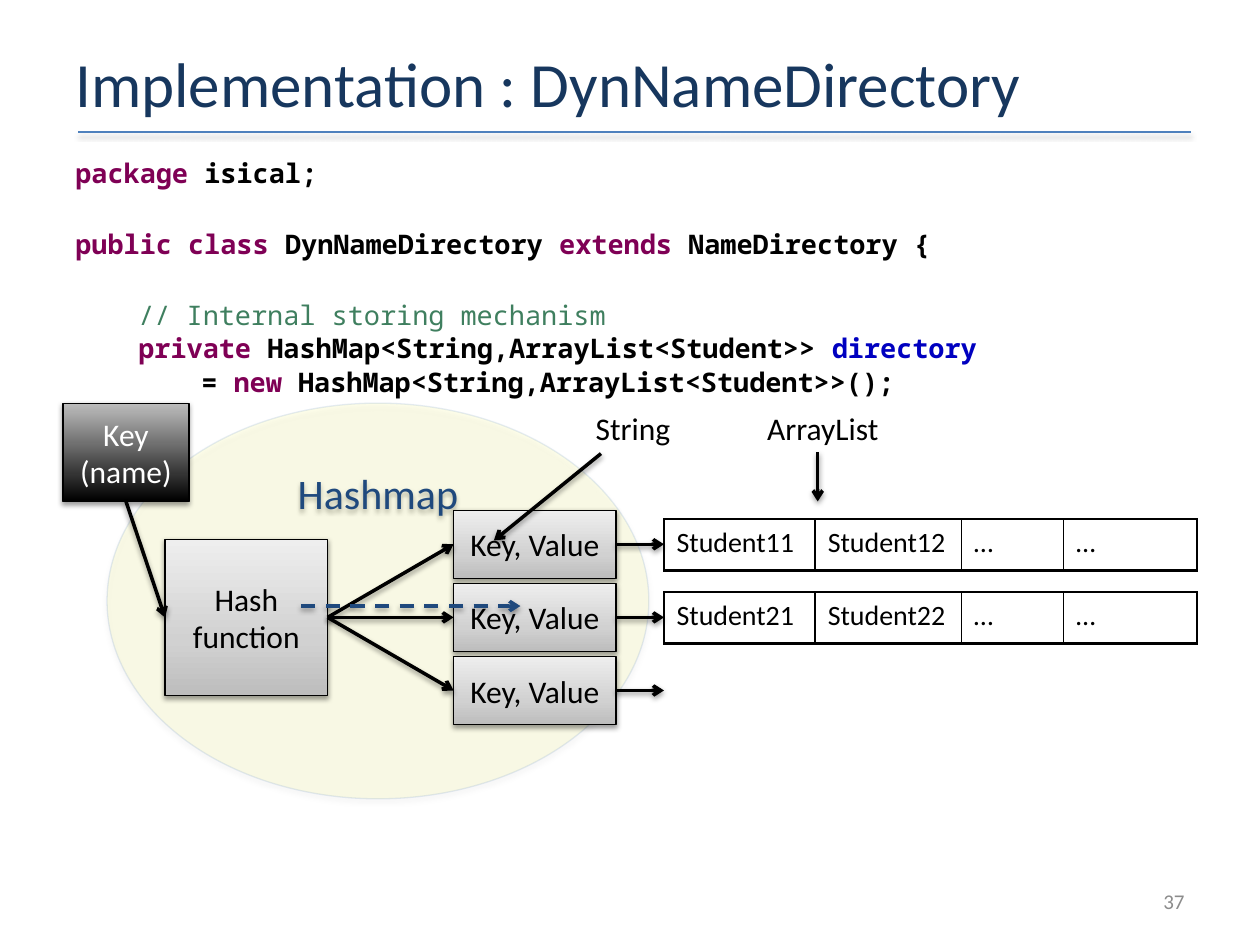
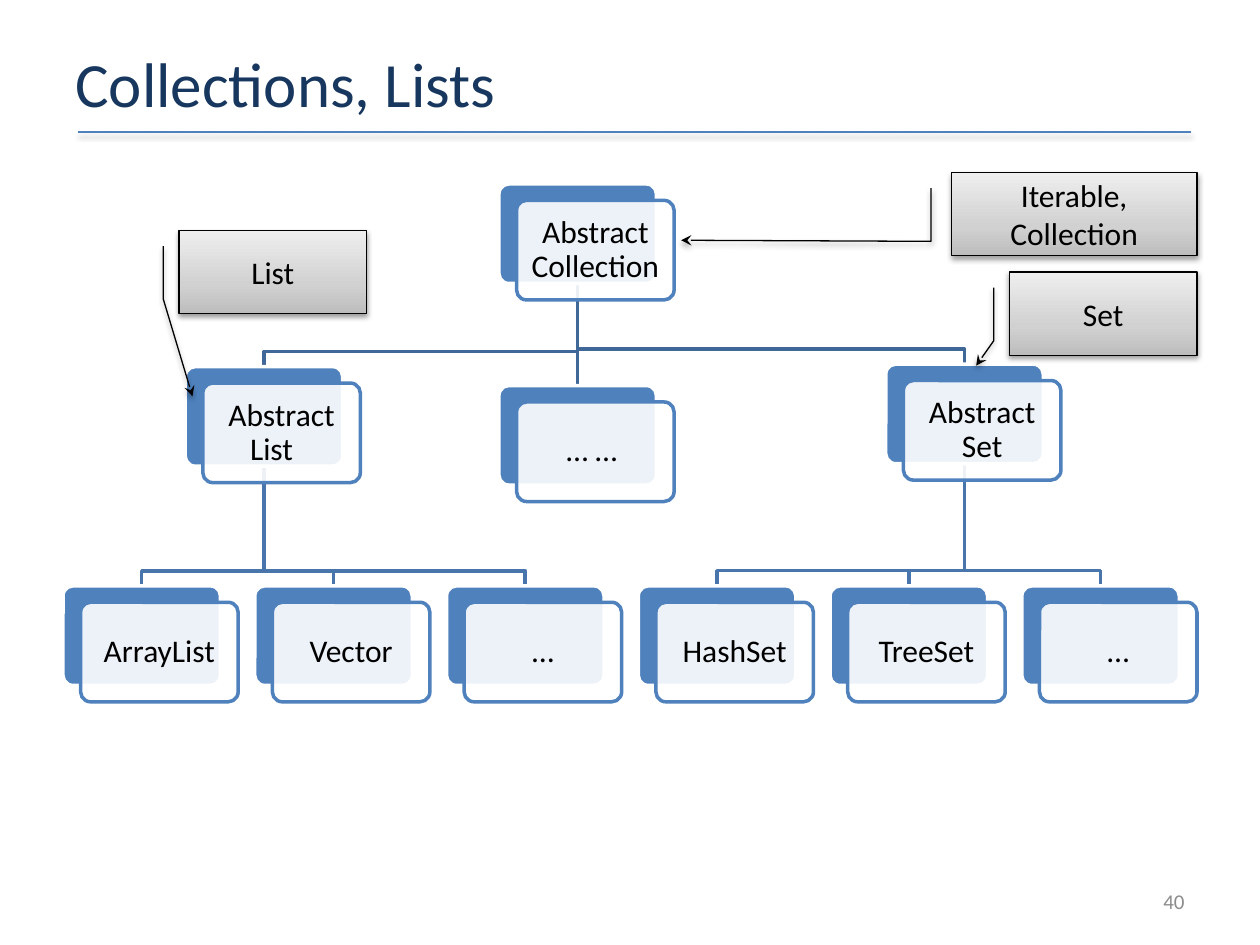
from dataclasses import dataclass
from typing import Any, NamedTuple, Optional

from lxml.etree import SubElement as Sub
from pptx import Presentation
from pptx.dml.color import RGBColor as Rgb
from pptx.enum.dml import MSO_LINE as Dash
from pptx.enum.shapes import MSO_CONNECTOR as Conn, MSO_SHAPE as Geom
from pptx.enum.text import MSO_ANCHOR as Anchor, PP_ALIGN as Align
from pptx.oxml.ns import qn
from pptx.util import Inches, Pt


@dataclass(frozen=True)
class Theme:
    font: str = "Calibri"
    mono: str = "Noto Sans Mono"
    black: str = "000000"
    white: str = "FFFFFF"
    title: str = "17375E"
    navy: str = "1F497D"
    blue: str = "4F81BD"
    upper: str = "3F6797"
    lower: str = "4875AC"
    number: str = "8C8C8C"
    keyword: str = "7F0055"
    remark: str = "3F7F5F"
    field: str = "0000C0"
    title_pt: float = 36
    label_pt: float = 24
    text_pt: float = 18
    cell_pt: float = 16
    code_pt: float = 15.4
    small_pt: float = 12


T = Theme()
GREY = ((0, "BDBDBD"), (35, "D1D1D1"), (100, "EEEEEE"))
DARK = ((0, T.black), (100, "BDBDBD"))


class Box(NamedTuple):
    x: float
    y: float
    w: float
    h: float

    def emu(self) -> list:
        return [Inches(v) for v in self]


class Line(NamedTuple):
    """Straight line; a joined end gives a shape and the index of its side."""
    start: tuple
    end: tuple
    color: str = T.black
    width: float = 2
    head: Optional[str] = "arrow"
    dash: Any = None
    shadow: bool = True


class Card(NamedTuple):
    text: str
    x: float
    y: float
    boss: Optional[str] = None


class Call(NamedTuple):
    text: str
    box: Box
    tip: tuple


class Code(NamedTuple):
    indent: float
    gap: bool
    runs: tuple


# Formatting helpers
def put(obj: Any, **vals: Any) -> None:
    for name, val in vals.items():
        setattr(obj, name, val)


def ink(font: Any, size: float, color: str, name: str = T.font, bold: bool = False) -> None:
    put(font, name=name, size=Pt(size), bold=bold)
    font.color.rgb = Rgb.from_string(color)


def write(frame: Any, text: str, size: float = T.text_pt, color: str = T.black,
          align: Any = Align.LEFT, anchor: Any = Anchor.TOP) -> None:
    put(frame, word_wrap=True, vertical_anchor=anchor)
    para = frame.paragraphs[0]
    para.alignment = align
    run = para.add_run()
    run.text = text
    ink(run.font, size, color)


def label(slide: Any, box: Box, text: str, **look: Any) -> None:
    write(slide.shapes.add_textbox(*box.emu()).text_frame, text, **look)


def fade(fill: Any, percent: int) -> None:
    Sub(fill.find(qn("a:solidFill"))[0], qn("a:alpha"), val=str(percent * 1000))


def stroke(line: Any, color: str, width: float) -> None:
    line.color.rgb = Rgb.from_string(color)
    line.width = Pt(width)


def shade(effects: Any, alpha: int = 38, drop: float = 1.6) -> None:
    cast = Sub(effects, qn("a:outerShdw"), blurRad=str(Pt(3.1)), dist=str(Pt(drop)),
               dir="5400000", rotWithShape="0")
    tone = Sub(cast, qn("a:srgbClr"), val=T.black)
    Sub(tone, qn("a:alpha"), val=str(alpha * 1000))


def tip(shape: Any, kind: str) -> None:
    Sub(shape.element.spPr.find(qn("a:ln")), qn("a:tailEnd"), type=kind)


def blend(shape: Any, stops: tuple) -> None:
    shape.fill.gradient()
    shape.fill.gradient_angle = 90
    ramp = shape.element.spPr.find(qn("a:gradFill")).find(qn("a:gsLst"))
    ramp.clear()
    for pos, color in stops:
        Sub(Sub(ramp, qn("a:gs"), pos=str(pos * 1000)), qn("a:srgbClr"), val=color)


# Drawing helpers
def shape_at(slide: Any, kind: Any, box: Box, fill: Any, line: str, width: float) -> Any:
    shape = slide.shapes.add_shape(kind, *box.emu())
    shape.shadow.inherit = False
    if isinstance(fill, str):
        shape.fill.solid()
        shape.fill.fore_color.rgb = Rgb.from_string(fill)
    else:
        blend(shape, fill)
    stroke(shape.line, line, width)
    return shape


def block(slide: Any, box: Box, text: str, kind: Any = Geom.RECTANGLE,
          stops: tuple = GREY, color: str = T.black) -> Any:
    shape = shape_at(slide, kind, box, stops, T.black, 0.75)
    shade(shape.element.spPr.find(qn("a:effectLst")))
    write(shape.text_frame, text, color=color, align=Align.CENTER, anchor=Anchor.MIDDLE)
    return shape


def draw(slide: Any, item: Line) -> Any:
    ends = [(0, 0) if hasattr(p[0], "shape_id") else p for p in (item.start, item.end)]
    line = slide.shapes.add_connector(
        Conn.STRAIGHT, *[Inches(v) for end in ends for v in end])
    for point, join in ((item.start, line.begin_connect), (item.end, line.end_connect)):
        if hasattr(point[0], "shape_id"):
            join(*point)
    stroke(line.line, item.color, item.width)
    if item.dash:
        line.line.dash_style = item.dash
    if item.head:
        tip(line, item.head)
    effects = Sub(line.element.spPr, qn("a:effectLst"))
    if item.shadow:
        shade(effects)
    return line


def start(deck: Any, title: str, number: int) -> Any:
    """New slide with title, rule and page number."""
    slide = deck.slides.add_slide(deck.slide_layouts[6])
    draw(slide, Line((0.62, 1.05), (9.45, 1.05), T.blue, 1, None))
    label(slide, Box(0.5, 0.3, 9, 0.71), title, size=T.title_pt, color=T.title,
          anchor=Anchor.MIDDLE)
    label(slide, Box(7.17, 6.95, 2.33, 0.4), str(number), size=T.small_pt,
          color=T.number, align=Align.RIGHT, anchor=Anchor.MIDDLE)
    return slide


# Slide 1: code, hash map and student lists
K, B = T.keyword, T.black
CODE = (
    Code(0, False, (("package ", K), ("isical;", B))),
    Code(0, True, (("public class ", K), ("DynNameDirectory ", B), ("extends ", K),
                   ("NameDirectory {", B))),
    Code(0.5, True, (("// Internal storing mechanism", T.remark),)),
    Code(0.5, False, (("private ", K), ("HashMap<String,ArrayList<Student>> ", B),
                      ("directory", T.field))),
    Code(1, False, (("= ", B), ("new ", K), ("HashMap<String,ArrayList<Student>>();", B))),
)


def code(slide: Any) -> None:
    frame = slide.shapes.add_textbox(*Box(0.5, 1.19, 9, 1.99).emu()).text_frame
    frame.word_wrap = True
    for i, row in enumerate(CODE):
        para = frame.add_paragraph() if i else frame.paragraphs[0]
        para.space_before = Pt(22.2 if row.gap else 0.6)
        para._p.get_or_add_pPr().set("marL", str(Inches(row.indent)))
        for text, color in row.runs:
            run = para.add_run()
            run.text = text
            ink(run.font, T.code_pt, color, T.mono, color != T.remark)


def grid(slide: Any, top: float, names: tuple) -> None:
    wide = (1.2, 1.16, 0.81, 1.06)
    box = Box(5.27, top, sum(wide), 0.41)
    table = slide.shapes.add_table(1, len(wide), *box.emu()).table
    put(table, first_row=False, horz_banding=False)
    for col, width, cell, name in zip(table.columns, wide, table.rows[0].cells, names):
        col.width = Inches(width)
        write(cell.text_frame, name, T.cell_pt)
        props = cell._tc.get_or_add_tcPr()
        for side, weight in zip("LRTB", (1, 1, 1, 2)):
            edge = Sub(props, qn(f"a:ln{side}"), w=str(Pt(weight)))
            Sub(Sub(edge, qn("a:solidFill")), qn("a:srgbClr"), val=T.black)
        cell.fill.background()


def map_slide(deck: Any) -> None:
    slide = start(deck, "Implementation : DynNameDirectory", 37)
    oval = shape_at(slide, Geom.OVAL, Box(0.85, 3.2, 4.3, 3.14), "FFFF00", "4B7EBC", 0.75)
    props = oval.element.spPr
    fade(props, 8)
    fade(props.find(qn("a:ln")), 14)
    shade(props.find(qn("a:effectLst")), 35, 1.8)
    write(oval.text_frame, "Hashmap", T.label_pt, T.navy, Align.CENTER)
    code(slide)

    # Hash function, its entries and their lists
    step = 0.58
    hasher = block(slide, Box(1.31, 4.28, 1.29, 1.24), "Hash function")
    for i in range(3):
        entry = block(slide, Box(3.6, 4.05 + i * step, 1.29, 0.54), "Key, Value")
        draw(slide, Line((hasher, 3), (entry, 1)))
        draw(slide, Line((entry, 3), (5.27, 4.32 + i * step)))
    for i in range(2):
        grid(slide, 4.12 + i * step, (f"Student{i + 1}1", f"Student{i + 1}2", "…", "…"))

    # Key and type labels
    key = block(slide, Box(0.5, 3.2, 1, 0.78), "Key (name)", stops=DARK, color=T.white)
    label(slide, Box(4.63, 3.2, 1.04, 0.4), "String")
    label(slide, Box(5.99, 3.2, 1.14, 0.4), "ArrayList")
    for line in (
        Line((key, 2), (hasher, 1)),
        Line((2.39, 4.81), (4.13, 4.81), T.navy, dash=Dash.DASH),
        Line((4.77, 3.6), (3.92, 4.29)),
        Line((6.49, 3.59), (6.49, 3.98)),
    ):
        draw(slide, line)


# Slide 2: class tree
WIDE, HIGH = 1.25, 0.79
STEP = 7.61 / 5
LEAVES = ("ArrayList", "Vector", "…", "HashSet", "TreeSet", "…")
ROOT, LIST, SET = "Abstract Collection", "Abstract List\t", "Abstract Set"
CARDS = (
    Card(ROOT, 3.96, 1.46),
    Card(LIST, 1.47, 2.91, ROOT),
    Card("… … ", 3.96, 3.06, ROOT),
    Card(SET, 7.03, 2.89, ROOT),
    *(Card(text, 0.5 + i * STEP, 4.65, LIST if i < 3 else SET)
      for i, text in enumerate(LEAVES)),
)
CALLS = (
    Call("Iterable, Collection", Box(7.55, 1.37, 1.95, 0.66), (0.814, -1.1)),
    Call("List", Box(1.42, 1.83, 1.49, 0.66), (1.994, 0.072)),
    Call("Set", Box(8.01, 2.16, 1.49, 0.66), (1.125, -0.176)),
)


def card(slide: Any, item: Card) -> Any:
    kind = Geom.ROUNDED_RECTANGLE
    back = shape_at(slide, kind, Box(item.x, item.y, WIDE, HIGH), T.blue, T.white, 2)
    front = shape_at(slide, kind, Box(item.x + 0.14, item.y + 0.13, WIDE, HIGH),
                     T.white, T.blue, 2)
    fade(front.element.spPr, 90)
    for shape in (back, front):
        shape.adjustments[0] = 0.1
    frame = front.text_frame
    inset = Inches(0.09)
    put(frame, margin_left=inset, margin_right=inset, margin_top=inset, margin_bottom=inset)
    write(frame, item.text, align=Align.CENTER, anchor=Anchor.MIDDLE)
    frame.paragraphs[0].line_spacing = 0.9
    return back


def link(slide: Any, boss: Any, item: Any, color: str) -> None:
    """Elbow from boss to item, placed behind the cards."""
    x1, x2 = (s.left + s.width // 2 for s in (boss, item))
    if x1 == x2:
        line = draw(slide, Line((boss, 2), (item, 0), color, 2, None, shadow=False))
    else:
        bend = item.top - Inches(0.12)
        path = slide.shapes.build_freeform(x1, boss.top + boss.height)
        path.add_line_segments([(x1, bend), (x2, bend), (x2, item.top)], close=False)
        line = path.convert_to_shape()
        line.fill.background()
        line.shadow.inherit = False
        stroke(line.line, color, 2)
    line.element.getparent().insert(2, line.element)


def tree_slide(deck: Any) -> None:
    slide = start(deck, "Collections, Lists", 40)
    drawn = {}
    for item in CARDS:
        back = card(slide, item)
        drawn[item.text] = back
        if item.boss:
            link(slide, drawn[item.boss], back, T.upper if item.boss == ROOT else T.lower)
    for call in CALLS:
        shape = block(slide, call.box, call.text, Geom.LINE_CALLOUT_2)
        for i, val in enumerate((0.188, -0.083, 0.827, -0.083, *call.tip)):
            shape.adjustments[i] = val
        tip(shape, "stealth")


def main() -> None:
    deck = Presentation()
    put(deck, slide_width=Inches(10), slide_height=Inches(7.5))
    map_slide(deck)
    tree_slide(deck)
    deck.save("out.pptx")


if __name__ == "__main__":
    main()
